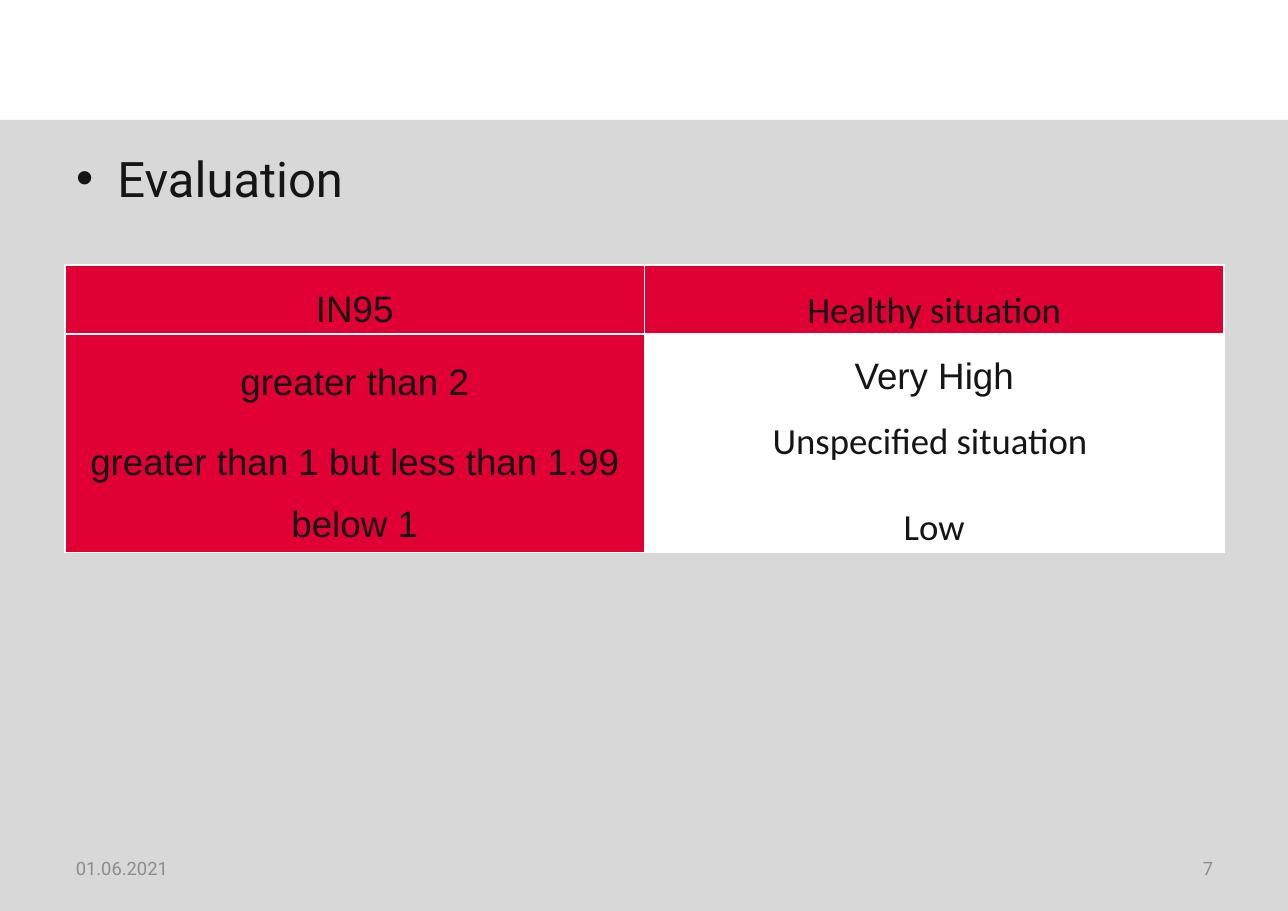
import pptx
import pptx.util
import pptx.dml.color
import pptx.enum.shapes
import pptx.enum.text
import pptx.oxml

PX = 914400 / 110.2
INK, RED, GREY, WHITE, MUTED = "151515", "E00034", "D8D8D8", "FFFFFF", "8C8C8C"
ALIGN = pptx.enum.text.PP_ALIGN
MIDDLE = pptx.enum.text.MSO_ANCHOR.MIDDLE
NS = 'xmlns:a="http://schemas.openxmlformats.org/drawingml/2006/main"'

HEADER = [
    [("IN95", ["Arial"])],
    [("Healthy situation", ["Calibri"])],
]
RATINGS = [
    [("greater than 2", ["Arial"]),
     ("greater than 1 but less than 1.99\nbelow 1", ["Arial", "Arial"])],
    [("Very High\nUnspecified situation ", ["Arial", "Calibri"]),
     ("Low", ["Calibri"])],
]


def px(*lengths):
    return [pptx.util.Emu(round(n * PX)) for n in lengths]


def rgb(hex_color):
    return pptx.dml.color.RGBColor.from_string(hex_color)


def style(r, font, size, color):
    r.font.name = font
    r.font.size = pptx.util.Pt(size)
    r.font.color.rgb = rgb(color)


def add_panel(s, box):
    sp = s.shapes.add_shape(pptx.enum.shapes.MSO_SHAPE.RECTANGLE, *px(*box))
    sp.shadow.inherit = False
    sp.fill.solid()
    sp.fill.fore_color.rgb = rgb(GREY)
    sp.line.fill.background()
    sp.element.getparent().insert(2, sp.element)


def fill_body(sp, box, text):
    sp.left, sp.top, sp.width, sp.height = px(*box)
    tf = sp.text_frame
    tf.auto_size = pptx.enum.text.MSO_AUTO_SIZE.NONE
    tf.text = text
    p = tf.paragraphs[0]
    p.space_before = pptx.util.Pt(0)
    style(p.runs[0], "Roboto", 32, INK)


def add_footer(s, box):
    x, y, w, h = box
    part = 301
    items = [(x, "01.06.2021", ALIGN.LEFT), (x + w - part, "7", ALIGN.RIGHT)]
    for left, text, align in items:
        tf = s.shapes.add_textbox(*px(left, y, part, h)).text_frame
        tf.word_wrap = True
        tf.vertical_anchor = MIDDLE
        tf.text = text
        p = tf.paragraphs[0]
        p.alignment = align
        style(p.runs[0], "Roboto", 12, MUTED)


def fill_cell(cell, paragraphs, color):
    cell.vertical_anchor = MIDDLE
    cell.margin_left = cell.margin_right = cell.margin_top = cell.margin_bottom = px(1)[0]
    cell.fill.solid()
    cell.fill.fore_color.rgb = rgb(color)
    tcPr = cell._tc.get_or_add_tcPr()
    for i, side in enumerate("LRTB"):
        tcPr.insert(i, pptx.oxml.parse_xml(
            f'<a:ln{side} {NS} w="12700"><a:solidFill><a:srgbClr val="{WHITE}"/>'
            f'</a:solidFill></a:ln{side}>'))
    tf = cell.text_frame
    for i, (text, fonts) in enumerate(paragraphs):
        p = tf.add_paragraph() if i else tf.paragraphs[0]
        p.text = text
        p.alignment = ALIGN.CENTER
        p.line_spacing = 1.5
        p.space_before = pptx.util.Pt(6 if i else 0)
        p.space_after = pptx.util.Pt(6)
        for r, font in zip(p.runs, fonts):
            style(r, font, 24, INK)


def add_ratings(s, box):
    table = s.shapes.add_table(2, 2, *px(*box)).table
    heights = (69, box[3] - 69)
    for row, height in zip(table.rows, heights):
        row.height = px(height)[0]
    for i, contents in enumerate((HEADER, RATINGS)):
        for j, paragraphs in enumerate(contents):
            fill_cell(table.cell(i, j), paragraphs, WHITE if i and j else RED)


def main():
    prs = pptx.Presentation()
    prs.slide_width, prs.slide_height = px(1288, 911)
    s = prs.slides.add_slide(prs.slide_layouts[1])
    title = s.shapes.title.element
    title.getparent().remove(title)
    add_panel(s, (0, 120, 1288, 791))
    fill_body(s.placeholders[1], (65, 143, 1159, 671), "Evaluation")
    add_footer(s, (65, 844, 1159, 49))
    add_ratings(s, (65, 265, 1159, 286))
    prs.save("out.pptx")


if __name__ == "__main__":
    main()
